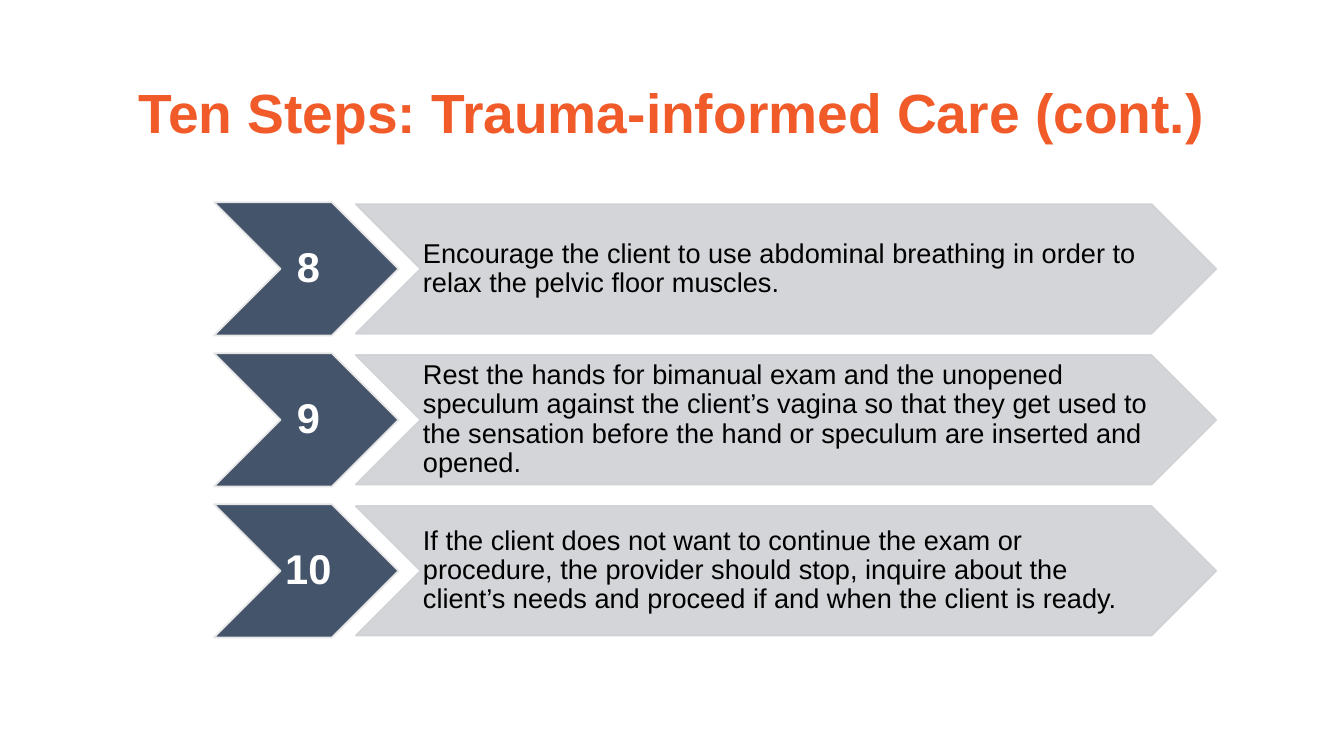
from lxml.etree import SubElement
from pptx import Presentation
from pptx.dml.color import RGBColor
from pptx.enum.shapes import MSO_SHAPE
from pptx.enum.text import MSO_ANCHOR, MSO_AUTO_SIZE, PP_ALIGN
from pptx.oxml.ns import qn
from pptx.util import Pt

PX = 9144
ORANGE = RGBColor(0xF1, 0x5A, 0x29)
NAVY = RGBColor(0x44, 0x54, 0x6A)
PALE = RGBColor(0xE7, 0xE6, 0xE6)
GREY = RGBColor(0xCF, 0xD1, 0xD4)
WHITE = RGBColor(0xFF, 0xFF, 0xFF)
BLACK = RGBColor(0x00, 0x00, 0x00)

STEPS = [
    ("8", "Encourage the client to use abdominal breathing in order to relax the "
          "pelvic floor muscles."),
    ("9", "Rest the hands for bimanual exam and the unopened speculum against the "
          "client’s vagina so that they get used to the sensation before the hand "
          "or speculum are inserted and opened."),
    ("10", "If the client does not want to continue the exam or procedure, the "
           "provider should stop, inquire about the client’s needs and proceed if "
           "and when the client is ready."),
]


def px(*lengths):
    return [length * PX for length in lengths]


def write(frame, text, size, color, bold, align, margins):
    (frame.margin_left, frame.margin_top,
     frame.margin_right, frame.margin_bottom) = px(*margins)
    para = frame.paragraphs[0]
    para.alignment = align
    span = para.add_run()
    span.text = text
    span.font.name = "Arial"
    span.font.size = Pt(size)
    span.font.bold = bold
    span.font.color.rgb = color
    return para


def add_title(page, left, top, width, height):
    title = page.shapes.title
    title.left, title.top, title.width, title.height = px(left, top, width, height)
    frame = title.text_frame
    frame.word_wrap = True
    frame.auto_size = MSO_AUTO_SIZE.NONE
    frame.vertical_anchor = MSO_ANCHOR.TOP
    write(frame, "Ten Steps: Trauma-informed Care (cont.)", 65, ORANGE, True,
          PP_ALIGN.CENTER, (10, 10, 10, 10))


def add_chevron(page, left, top, width, height, fill, line):
    chevron = page.shapes.add_shape(MSO_SHAPE.CHEVRON, *px(left, top, width, height))
    chevron.shadow.inherit = False
    chevron.fill.solid()
    chevron.fill.fore_color.rgb = fill
    chevron.line.color.rgb = line
    chevron.line.width = Pt(2)
    chevron.text_frame.vertical_anchor = MSO_ANCHOR.MIDDLE
    return chevron


def make_translucent(shape, percent):
    for color in shape.element.spPr.iter(qn("a:srgbClr")):
        SubElement(color, qn("a:alpha")).set("val", str(percent * 1000))


def add_step(page, left, top, width, height, number, text):
    badge = add_chevron(page, left, top, 302, height, NAVY, PALE)
    badge.text_frame.word_wrap = False
    para = write(badge.text_frame, number, 49, WHITE, True,
                 PP_ALIGN.CENTER, (7, 3, 0, 3))
    para.line_spacing = 0.9

    arrow = add_chevron(page, left + 232, top + 3, width - 232, height - 6, GREY, GREY)
    make_translucent(arrow, 90)
    arrow.text_frame.word_wrap = True
    para = write(arrow.text_frame, text, 32, BLACK, False,
                 PP_ALIGN.LEFT, (4, 2, 0, 2))
    para.line_spacing = 0.9


def add_steps(page, left, top, width, row_height, pitch):
    for row, (number, text) in enumerate(STEPS):
        add_step(page, left, top + row * pitch, width, row_height, number, text)


def main():
    deck = Presentation()
    deck.slide_width, deck.slide_height = px(2199, 1237)
    page = deck.slides.add_slide(deck.slide_layouts[5])
    add_title(page, 169, 118, 1860, 121)
    add_steps(page, 350, 331, 1640, 218, 247)
    deck.save("out.pptx")


if __name__ == "__main__":
    main()
